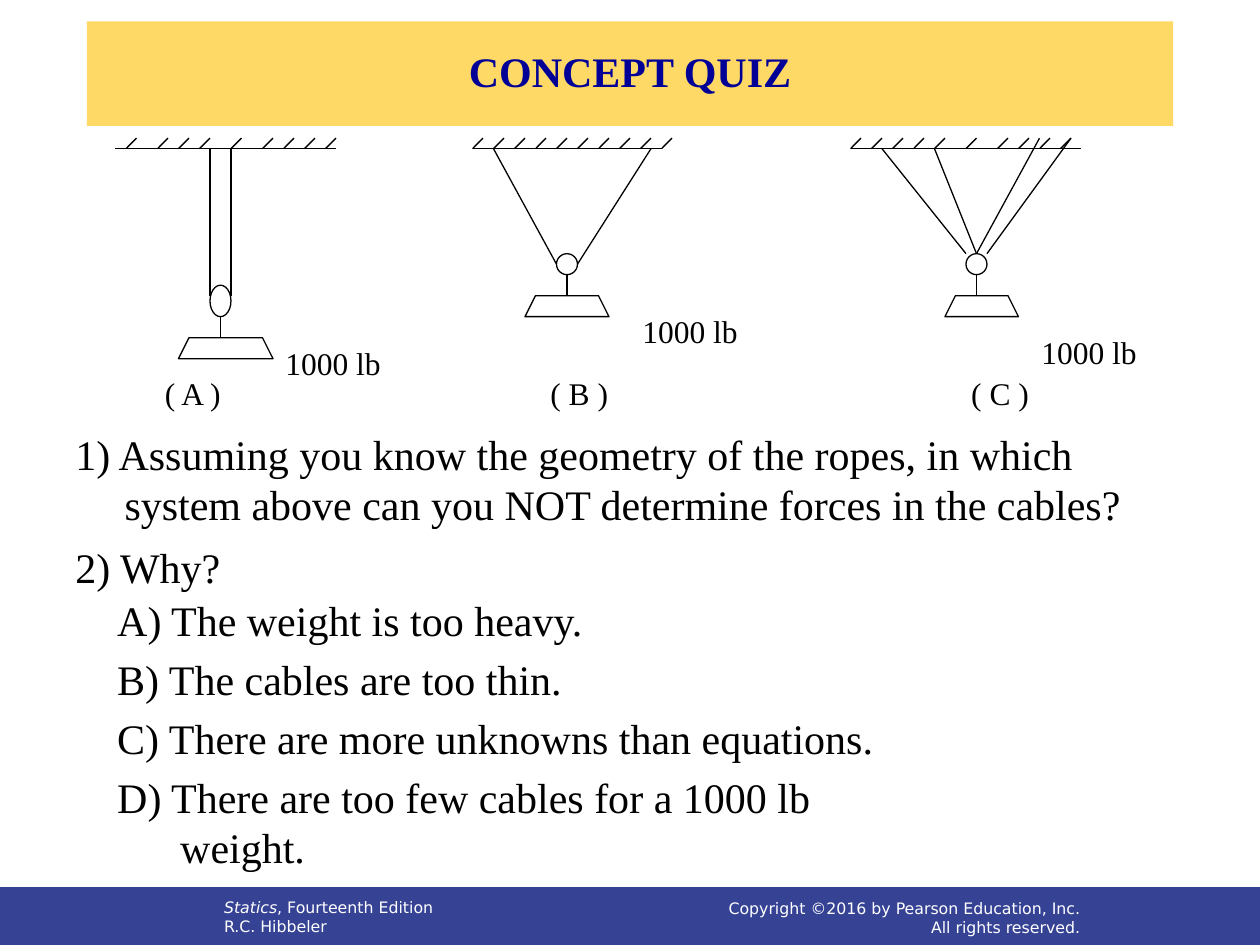
from lxml import etree
from pptx import Presentation
from pptx.dml.color import RGBColor
from pptx.enum.shapes import MSO_CONNECTOR, MSO_SHAPE
from pptx.enum.text import MSO_ANCHOR, MSO_AUTO_SIZE, PP_ALIGN
from pptx.oxml.ns import qn
from pptx.util import Emu, Inches, Pt

LINE = MSO_CONNECTOR.STRAIGHT
RECT, OVAL = MSO_SHAPE.RECTANGLE, MSO_SHAPE.OVAL
TOP, MID = MSO_ANCHOR.TOP, MSO_ANCHOR.MIDDLE
LEFT, MIDDLE, RIGHT = PP_ALIGN.LEFT, PP_ALIGN.CENTER, PP_ALIGN.RIGHT

BLACK = RGBColor(0, 0, 0)
WHITE = RGBColor(255, 255, 255)
BLUE = RGBColor(0x36, 0x43, 0x95)
NAVY = RGBColor(0, 0, 0x96)
GOLD = RGBColor(0xFF, 0xD9, 0x66)
SERIF, SANS = "Times New Roman", "DejaVu Sans"

TITLE = "CONCEPT QUIZ"
ASK = ("1) Assuming you know the geometry of the ropes, in which "
       "system above can you NOT determine forces in the cables?")
WHY = "2) Why?"
OPTIONS = [
    "A) The weight is too heavy.",
    "B) The cables are too thin.",
    "C) There are more unknowns than equations.",
    "D) There are too few cables for a 1000 lb weight.",
]
NAMES = [("( A )", 1.21), ("( B )", 4.27), ("( C )", 7.61)]
LOAD = "1000 lb"
BOOK = ["Statics, Fourteenth Edition", "R.C. Hibbeler"]
RIGHTS = ["Copyright ©2016 by Pearson Education, Inc.", "All rights reserved."]

# Drawing grid: cells of 1/12 inch, row 0 on the ceiling line.
CELL, ROOF = 1 / 12, 1.18
SYSTEMS = [
    dict(roof=(11, 32), ticks=[12, 15, 17, 19, 22, 25, 27, 29, 31],
         ropes=[(20, 0, 20, 14), (22, 0, 22, 14)],
         ring=(20, 13, 2, 3), weight=(18, 25), load=(26, 18, 1.17)),
    dict(roof=(45, 63), ticks=range(45, 64, 2),
         ropes=[(47, 0, 53, 11), (62, 0, 55, 11)],
         ring=(53, 10, 2, 2), weight=(51, 57), load=(60, 15, 1.08)),
    dict(roof=(81, 103), ticks=[81, 83, 85, 87, 89, 92, 95, 97, 99, 101],
         ropes=[(92, 10, 84, 0), (93, 10, 89, 0),
                (93, 10, 99, -1), (94, 10, 102, -1)],
         ring=(92, 10, 2, 2), weight=(91, 96), load=(98, 17, 1)),
]


def grid(col, row):
    return Inches(col * CELL), Inches(ROOF + row * CELL)


def place(shape, left, top, width, height):
    shape.left, shape.top = Inches(left), Inches(top)
    shape.width, shape.height = Inches(width), Inches(height)


def write(shape, lines, size, font=SERIF, color=BLACK, align=LEFT, anchor=TOP):
    frame = shape.text_frame
    frame.text = "\n".join(lines)
    frame.word_wrap = True
    frame.auto_size = MSO_AUTO_SIZE.NONE
    frame.vertical_anchor = anchor
    for para in frame.paragraphs:
        para.alignment = align
        for run in para.runs:
            style(run, size, font, color)
    return frame.paragraphs


def style(run, size, font, color):
    run.font.size, run.font.name = Pt(size), font
    run.font.color.rgb = color


def box(spot, lines, size, **look):
    shape = slide.shapes.add_textbox(0, 0, 0, 0)
    place(shape, *spot)
    return write(shape, lines, size, **look)


def indent(para, left, first):
    props = para._p.get_or_add_pPr()
    props.set("marL", str(Inches(left)))
    props.set("indent", str(Inches(first)))
    return props


def pen(shape, color=BLACK, width=0.75):
    shape.line.color.rgb = color
    shape.line.width = Pt(width)


def paint(shape, fill, line, width):
    shape.shadow.inherit = False
    shape.fill.solid()
    shape.fill.fore_color.rgb = fill
    pen(shape, line, width)


def rule(x1, y1, x2, y2):
    line = slide.shapes.add_connector(LINE, *grid(x1, y1), *grid(x2, y2))
    pen(line)
    etree.SubElement(line._element.spPr, qn("a:effectLst"))


def draw(roof, ticks, ropes, ring, weight, load):
    rule(roof[0], 0, roof[1], 0)
    for col in ticks:
        rule(col + 1, -1, col, 0)
    for rope in ropes:
        rule(*rope)

    col, row, wide, high = ring
    size = Inches(wide * CELL), Inches(high * CELL)
    loop = slide.shapes.add_shape(OVAL, *grid(col, row), *size)
    paint(loop, WHITE, BLACK, 0.75)

    mid, foot = col + wide / 2, row + high
    rule(mid, foot, mid, foot + 2)
    start, end = weight
    top, base = foot + 2, foot + 4
    path = slide.shapes.build_freeform(*grid(start, top))
    path.add_line_segments(
        [grid(end, top), grid(end + 1, base), grid(start - 1, base)], close=True)
    block = path.convert_to_shape()
    block.shadow.inherit = False
    block.fill.background()
    pen(block)

    col, row, wide = load
    box((col * CELL, ROOF + row * CELL, wide, 0.4), [LOAD], 18)


deck = Presentation()
deck.slide_width, deck.slide_height = Inches(10), Inches(7.5)
slide = deck.slides.add_slide(deck.slide_layouts[1])
title, body = slide.placeholders

# Footer
band = slide.shapes.add_shape(RECT, Emu(0), Emu(0), Emu(0), Emu(0))
place(band, -0.01, 7.04, 10.02, 0.47)
paint(band, BLUE, BLUE, 0.5)
book = box((1.68, 7.08, 2.9, 0.4), BOOK, 9, font=SANS, color=WHITE)
name, rest = BOOK[0].split(",")
head = book[0].runs[0]
head.text = name
head.font.italic = True
tail = book[0].add_run()
tail.text = "," + rest
style(tail, 9, SANS, WHITE)
box((4.67, 7.07, 4, 0.43), RIGHTS, 9, font=SANS, color=WHITE,
    align=RIGHT, anchor=MID)

# Rope systems
for system in SYSTEMS:
    draw(**system)
for label, left in NAMES:
    box((left, 2.92, 0.8, 0.4), [label], 18)

# Title, questions and answers
place(title, 0.69, 0.17, 8.62, 0.83)
title.fill.solid()
title.fill.fore_color.rgb = GOLD
lead = write(title, [TITLE], 24, color=NAVY, align=MIDDLE, anchor=MID)[0]
lead.line_spacing = 0.9
lead.runs[0].font.bold = True

indent(box((0.5, 3.35, 8.83, 0.91), [ASK], 24)[0], 0.39, -0.39)
box((0.5, 4.25, 1.5, 0.5), [WHY], 24)
place(body, 0.58, 4.67, 6.85, 2.34)
for i, para in enumerate(write(body, OPTIONS, 24)):
    etree.SubElement(indent(para, 0.75, -0.5), qn("a:buNone"))
    para.space_before = Pt(4.8 if i else 0)

deck.save("out.pptx")
